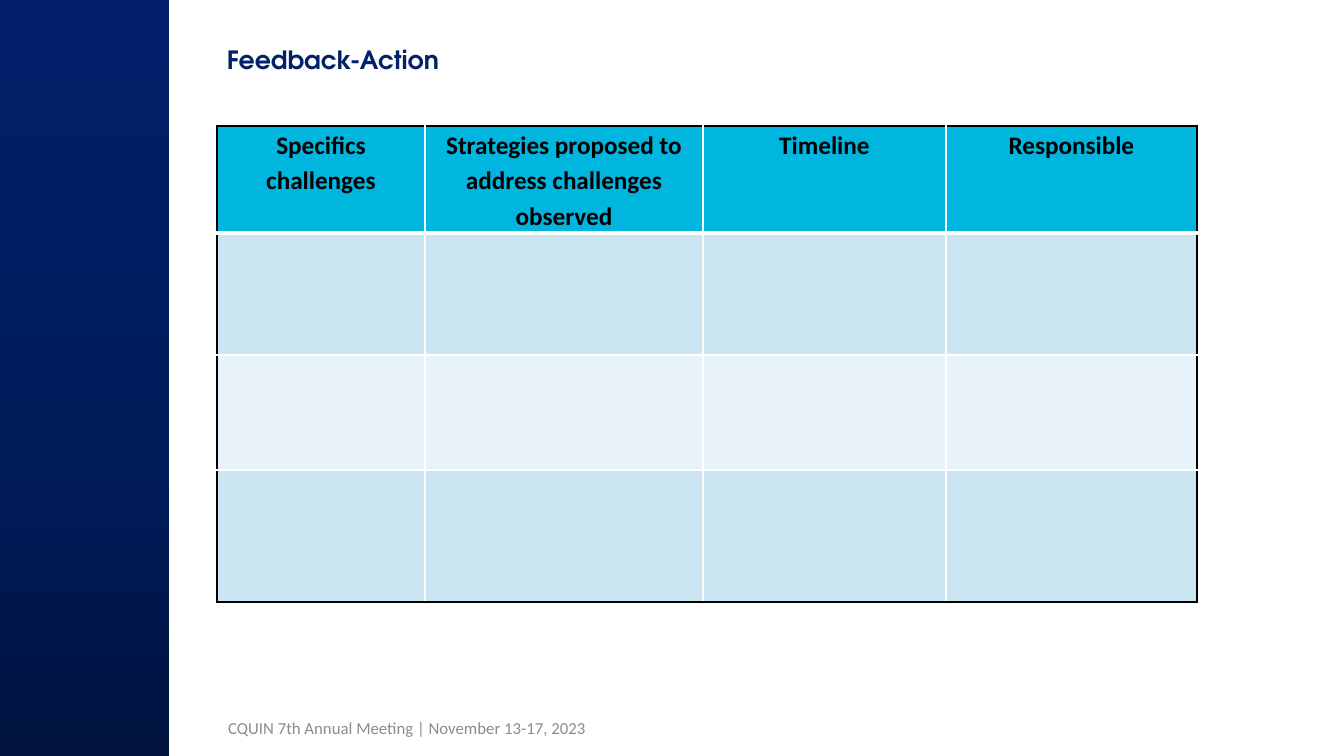
"""Build the Feedback-Action slide with its empty planning table."""
import copy

import lxml.etree
import pptx
import pptx.dml.color
import pptx.enum.shapes
import pptx.enum.text
import pptx.oxml.ns
import pptx.util

TITLE = "Feedback-Action"
FOOTER = "CQUIN 7th Annual Meeting | November 13-17, 2023"
HEADINGS = [
    "Specifics challenges",
    "Strategies proposed to address challenges observed",
    "Timeline",
    "Responsible",
]
COLUMN_WIDTHS = [208, 278, 243, 251]
ROW_HEIGHTS = [107, 122, 115, 132]
COLORS = {
    "title": "022169",
    "footer": "8C8C8C",
    "header": "00B5DE",
    "odd_row": "CCE5F2",
    "even_row": "E7F3F9",
    "black": "000000",
    "white": "FFFFFF",
}
SIDEBAR_STOPS = [(0, "00133F"), (0.38, "001B5A"), (1, "022069")]
EMU_PER_PX = 914400 / 100.8
ALIGN = pptx.enum.text.PP_ALIGN
ANCHOR = pptx.enum.text.MSO_ANCHOR


def px(*lengths):
    return [round(length * EMU_PER_PX) for length in lengths]


def rgb(value):
    return pptx.dml.color.RGBColor.from_string(value)


def write(frame, text, *, size, color, font="Calibri", bold=False,
          align=ALIGN.LEFT, spacing=None, after=0):
    frame.word_wrap = True
    paragraph = frame.paragraphs[0]
    paragraph.alignment = align
    paragraph.line_spacing = spacing
    paragraph.space_after = pptx.util.Pt(after)
    run = paragraph.add_run()
    run.text = text
    run.font.size = pptx.util.Pt(size)
    run.font.name = font
    run.font.bold = bold
    run.font.color.rgb = rgb(color)


def add_border(cell, side, color, points):
    qn = pptx.oxml.ns.qn
    line = lxml.etree.SubElement(
        cell._tc.get_or_add_tcPr(), qn("a:ln" + side), w=str(points * 12700))
    fill = lxml.etree.SubElement(line, qn("a:solidFill"))
    lxml.etree.SubElement(fill, qn("a:srgbClr"), val=color)


def add_sidebar(slide):
    sidebar = slide.shapes.add_shape(
        pptx.enum.shapes.MSO_SHAPE.RECTANGLE, *px(0, 0, 169, 756))
    sidebar.shadow.inherit = False
    sidebar.line.fill.background()
    sidebar.fill.gradient()
    sidebar.fill.gradient_angle = 90
    stop_list = next(sidebar._element.spPr.iter(pptx.oxml.ns.qn("a:gsLst")))
    stop_list.append(copy.deepcopy(stop_list[0]))
    for stop, (position, color) in zip(sidebar.fill.gradient_stops, SIDEBAR_STOPS):
        stop.position = position
        stop.color.rgb = rgb(color)


def add_plan(slide):
    plan = slide.shapes.add_table(
        len(ROW_HEIGHTS), len(COLUMN_WIDTHS),
        *px(217, 126, sum(COLUMN_WIDTHS), sum(ROW_HEIGHTS))).table
    for column, width in zip(plan.columns, px(*COLUMN_WIDTHS)):
        column.width = width
    last_row, last_column = len(ROW_HEIGHTS) - 1, len(COLUMN_WIDTHS) - 1
    for r, height in enumerate(px(*ROW_HEIGHTS)):
        plan.rows[r].height = height
        band = "header" if r == 0 else "odd_row" if r % 2 else "even_row"
        for c, heading in enumerate(HEADINGS):
            cell = plan.cell(r, c)
            outer = {"L": c == 0, "R": c == last_column, "T": r == 0, "B": r == last_row}
            for side, is_outer in outer.items():
                under_header = (r, side) in [(0, "B"), (1, "T")]
                add_border(cell, side, COLORS["black" if is_outer else "white"],
                           3 if under_header else 1)
            cell.fill.solid()
            cell.fill.fore_color.rgb = rgb(COLORS[band])
            if r == 0:
                cell.margin_left, cell.margin_right = px(5, 5)
                cell.margin_top = cell.margin_bottom = 0
                write(cell.text_frame, heading, size=18, color=COLORS["black"],
                      bold=True, align=ALIGN.CENTER, spacing=1.15, after=10)


def main():
    deck = pptx.Presentation()
    deck.slide_width, deck.slide_height = px(1344, 756)
    slide = deck.slides.add_slide(deck.slide_layouts[6])
    add_sidebar(slide)

    footer = slide.shapes.add_textbox(*px(59, 708, 696, 40)).text_frame
    footer.vertical_anchor = ANCHOR.MIDDLE
    write(footer, FOOTER, size=12, color=COLORS["footer"], align=ALIGN.CENTER)

    title = slide.shapes.add_textbox(*px(217, 39, 1008, 66)).text_frame
    title.vertical_anchor = ANCHOR.TOP
    write(title, TITLE, size=18, color=COLORS["title"],
          font="TeX Gyre Adventor", bold=True)

    add_plan(slide)
    deck.save("out.pptx")


if __name__ == "__main__":
    main()
